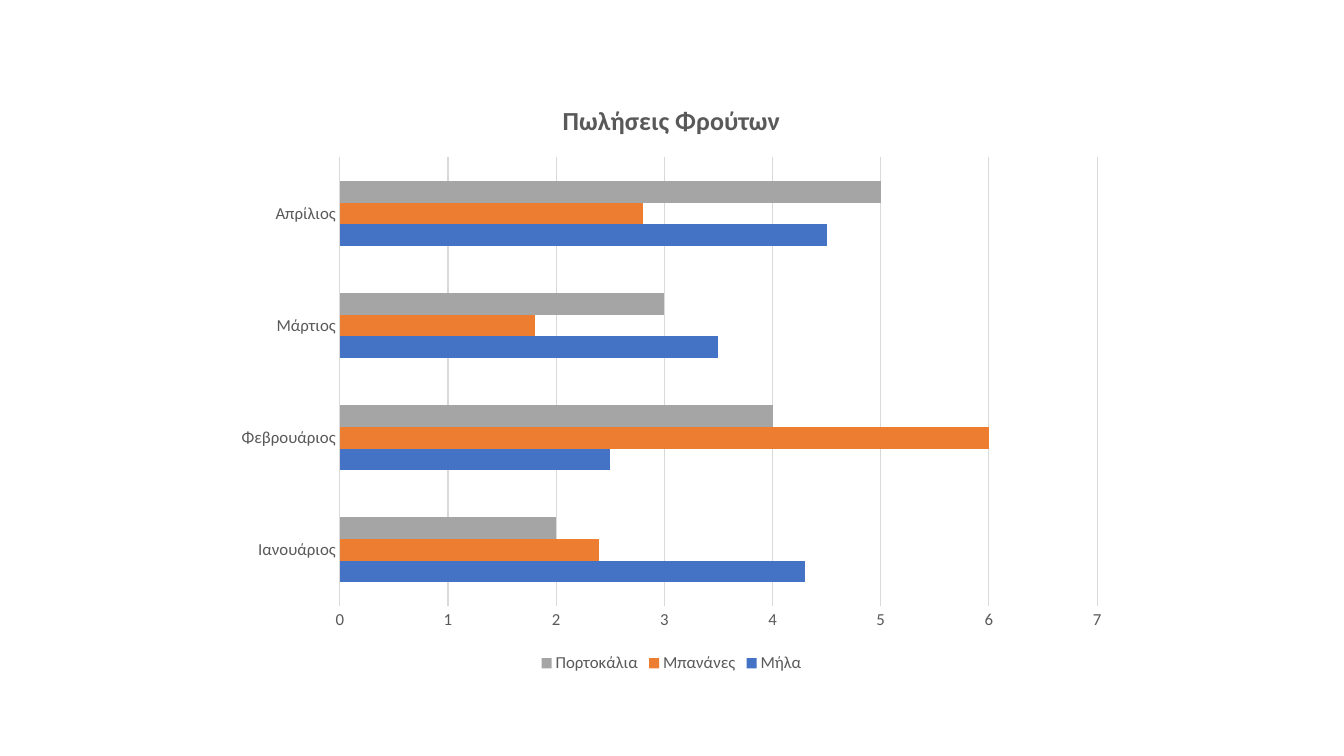
from dataclasses import dataclass

from pptx import Presentation
from pptx.chart.data import CategoryChartData
from pptx.dml.color import RGBColor
from pptx.enum.chart import XL_CHART_TYPE as ChartType
from pptx.enum.chart import XL_LEGEND_POSITION as LegendPosition
from pptx.enum.chart import XL_TICK_MARK as TickMark
from pptx.util import Emu, Pt

EMU_PER_PX = 9525
FONT = "Calibri"
TEXT_GREY = "595959"
LINE_GREY = "D9D9D9"


@dataclass(frozen=True)
class Fruit:
    name: str
    sales: tuple[float, ...]
    color: str


MONTHS = ("Ιανουάριος", "Φεβρουάριος", "Μάρτιος", "Απρίλιος")
FRUITS = (
    Fruit("Μήλα", (4.3, 2.5, 3.5, 4.5), "4472C4"),
    Fruit("Μπανάνες", (2.4, 6, 1.8, 2.8), "ED7D31"),
    Fruit("Πορτοκάλια", (2, 4, 3, 5), "A5A5A5"),
)


def px(length: int) -> Emu:
    return Emu(length * EMU_PER_PX)


def rgb(color: str) -> RGBColor:
    return RGBColor.from_string(color)


def set_font(font, size: float, bold: bool = False) -> None:
    font.name = FONT
    font.size = Pt(size)
    font.bold = bold
    font.color.rgb = rgb(TEXT_GREY)


def set_line(line) -> None:
    line.color.rgb = rgb(LINE_GREY)
    line.width = Pt(0.75)


def add_sales_chart(slide) -> None:
    sales = CategoryChartData()
    sales.categories = MONTHS
    for fruit in FRUITS:
        sales.add_series(fruit.name, fruit.sales)
    chart = slide.shapes.add_chart(
        ChartType.BAR_CLUSTERED, px(213), px(76), px(853), px(569), sales
    ).chart
    set_font(chart.font, 12)

    # Heading
    chart.has_title = True
    heading = chart.chart_title.text_frame
    heading.text = "Πωλήσεις Φρούτων"
    set_font(heading.paragraphs[0].font, 18.6, bold=True)

    # Bars
    bars = chart.plots[0]
    bars.gap_width = 219
    bars.vary_by_categories = False
    for series, fruit in zip(bars.series, FRUITS):
        series.format.fill.solid()
        series.format.fill.fore_color.rgb = rgb(fruit.color)

    # Axes
    months, amounts = chart.category_axis, chart.value_axis
    for axis in (months, amounts):
        axis.major_tick_mark = TickMark.NONE
        axis.minor_tick_mark = TickMark.NONE
        set_font(axis.tick_labels.font, 12)
    set_line(months.format.line)
    amounts.format.line.fill.background()
    amounts.has_major_gridlines = True
    set_line(amounts.major_gridlines.format.line)

    # Legend
    chart.has_legend = True
    chart.legend.position = LegendPosition.BOTTOM
    chart.legend.include_in_layout = False
    set_font(chart.legend.font, 12)


def main() -> None:
    deck = Presentation()
    deck.slide_width, deck.slide_height = px(1280), px(720)
    blank_layout = deck.slide_layouts[6]
    add_sales_chart(deck.slides.add_slide(blank_layout))
    deck.save("out.pptx")


if __name__ == "__main__":
    main()
